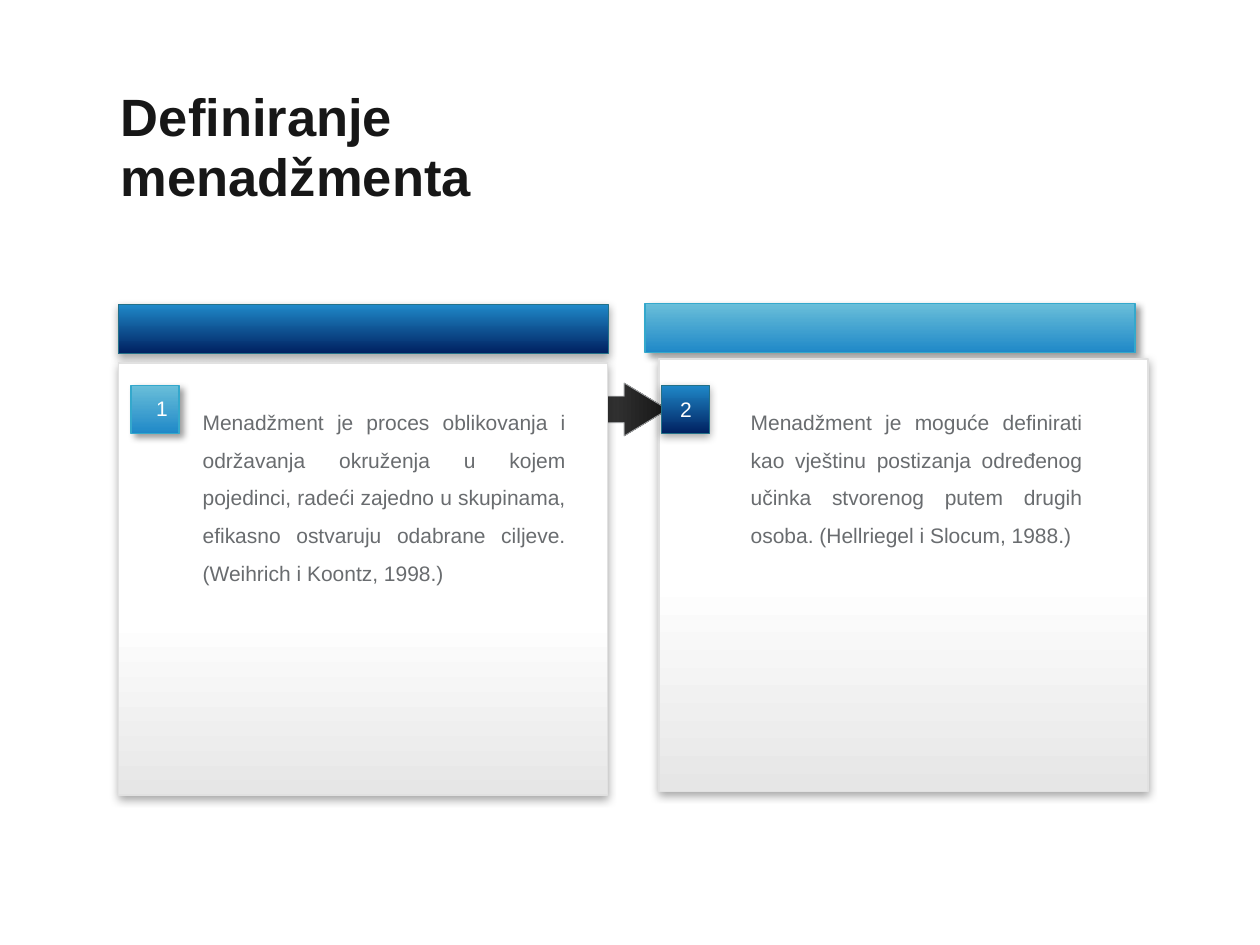
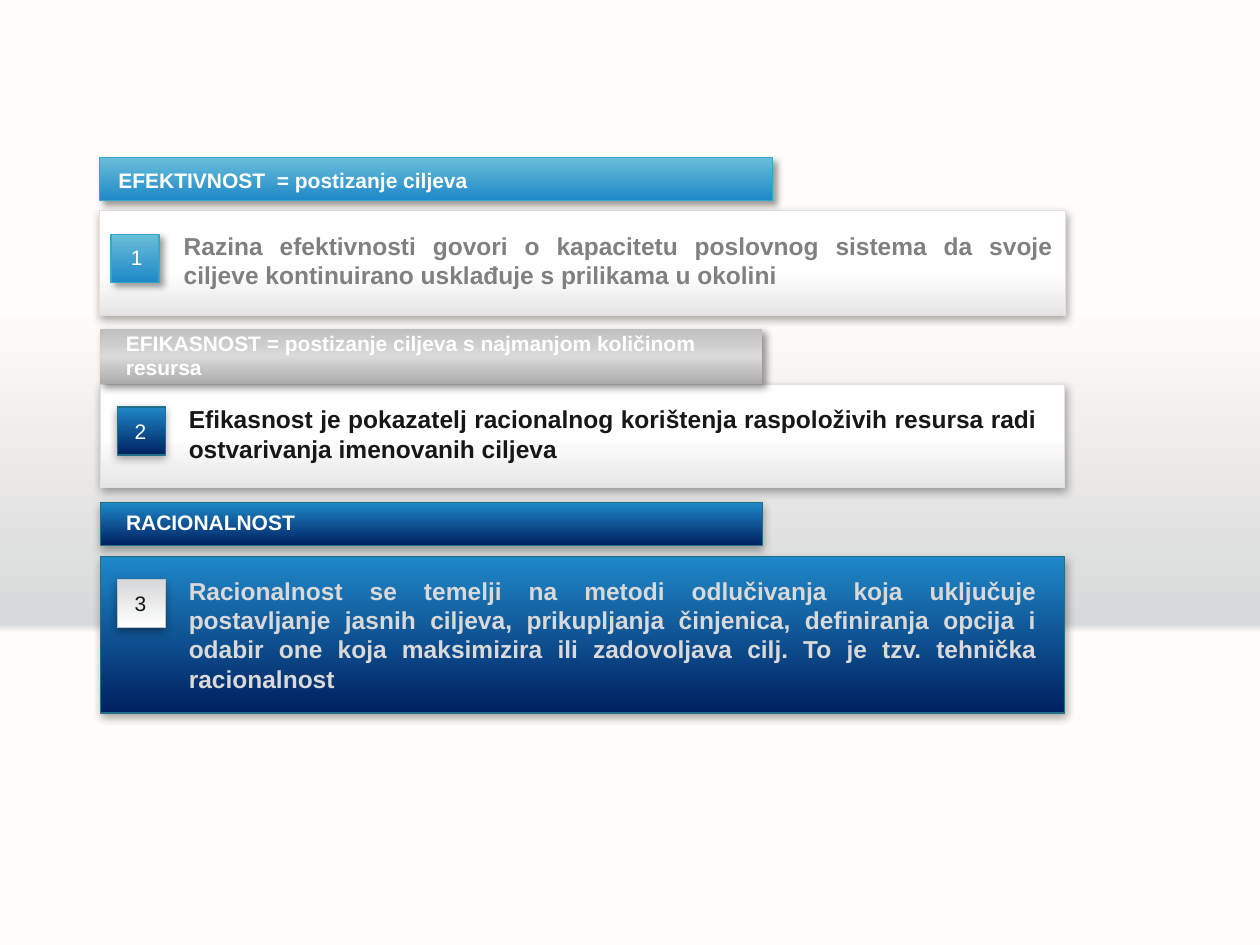
import pptx
import pptx.util
import pptx.dml.color
import pptx.enum.shapes
import pptx.enum.text
import pptx.oxml.ns
import lxml.etree

Pt = pptx.util.Pt
qn = pptx.oxml.ns.qn
Align = pptx.enum.text.PP_ALIGN
Anchor = pptx.enum.text.MSO_ANCHOR
Preset = pptx.enum.shapes.MSO_SHAPE

# Shadows: opacity %, blur, distance, direction
SOFT = (35, 5, 1.8, 90)
SLANTED = (40, 4, 3, 45)

# Looks: gradient stops, gradient angle, line colour, line width, shadow
LIGHT_BLUE = ([(0, "69BED9"), (100, "1F88C8")], 90, "34A8CC", 0.75, SLANTED)
DARK_BLUE = ([(0, "1F88C8"), (100, "002060")], 90, "227088", 0.75, SOFT)
SILVER = ([(0, "D7D8D9"), (100, "FFFFFF")], 90, "C1C2C4", 0.75, SOFT)
GREY = ([(0, "BFBFBF"), (50, "D9D9D9"), (100, "ACACAC")], 90, None, 0, SLANTED)
PANEL_HIGH, PANEL_LOW = [
    ([(0, "FFFFFF"), (middle, "FFFFFF"), (100, "E6E6E6")], 90, "E1E1E1", 0.75, SOFT)
    for middle in (51, 59)
]
BLACK = ([(0, "3A3A3A"), (100, "171717")], 0, "A0A2A4", 0.5, None)
BACKDROP = [(0, "FFFCF9"), (32, "FFFCF9"), (66, "D7D8D9"), (67, "FFFCF9"), (100, "FFFCF9")]

# Text styles: frame, paragraph and font values
TITLE = (
    {"vertical_anchor": Anchor.MIDDLE, "margin_left": 0, "margin_right": 0},
    {"alignment": Align.LEFT, "line_spacing": 0.95},
    {"size": Pt(30), "bold": True},
)
HEADING = (TITLE[0], TITLE[1], {"size": Pt(12), "bold": True})
NUMBER = ({"vertical_anchor": Anchor.MIDDLE}, {"alignment": Align.CENTER}, {"size": Pt(12)})
DEFINITION = ({}, {"alignment": Align.JUSTIFY, "line_spacing": 1.5}, {"size": Pt(12)})
STATEMENT = ({}, {"alignment": Align.JUSTIFY}, {"size": Pt(14), "bold": True})

BADGE = 27.4
NUMBER_SIZE = (25.2, 21.6)


def paint(page, place, look, preset=Preset.RECTANGLE):
    """Draw a gradient shape, or the page background when place is None."""
    stops, angle, line, width, shadow = look
    if place is None:
        owner, element = page.background, page._element
    else:
        owner = page.shapes.add_shape(preset, *map(Pt, place))
        element = owner._element
    owner.fill.gradient()
    gradient = element.find(".//" + qn("a:gradFill"))
    gradient.find(qn("a:lin")).set("ang", str(angle * 60000))
    stop_list = gradient.find(qn("a:gsLst"))
    stop_list.clear()
    for position, color in stops:
        stop = lxml.etree.SubElement(stop_list, qn("a:gs"), pos=str(position * 1000))
        lxml.etree.SubElement(stop, qn("a:srgbClr"), val=color)
    if place is None:
        return owner
    if line:
        owner.line.color.rgb = pptx.dml.color.RGBColor.from_string(line)
        owner.line.width = Pt(width)
    else:
        owner.line.fill.background()
    owner.shadow.inherit = False
    if shadow:
        opacity, blur, distance, direction = shadow
        outer = lxml.etree.SubElement(
            element.spPr.find(qn("a:effectLst")), qn("a:outerShdw"),
            blurRad=str(Pt(blur)), dist=str(Pt(distance)),
            dir=str(direction * 60000), algn="ctr", rotWithShape="0")
        shade = lxml.etree.SubElement(outer, qn("a:srgbClr"), val="000000")
        lxml.etree.SubElement(shade, qn("a:alpha"), val=str(opacity * 1000))
    return owner


def write(page, place, text, style, color, box=None):
    """Put one styled paragraph in a box, by default a new text box."""
    box = box or page.shapes.add_textbox(*map(Pt, place))
    box.left, box.top, box.width, box.height = map(Pt, place)
    frame = box.text_frame
    frame.word_wrap = True
    frame.auto_size = pptx.enum.text.MSO_AUTO_SIZE.NONE
    para = frame.paragraphs[0]
    span = para.add_run()
    span.text = text
    span.font.name = "Arial"
    span.font.color.rgb = pptx.dml.color.RGBColor.from_string(color)
    for target, values in zip((frame, para, span.font), style):
        for name, value in values.items():
            setattr(target, name, value)


deck = pptx.Presentation()
deck.slide_width, deck.slide_height = Pt(720), Pt(540)

# Slide 1: two definitions joined by an arrow
page = deck.slides.add_slide(deck.slide_layouts[5])
write(page, (69.1, 61.2, 210.2, 47.5), "Definiranje menadžmenta", TITLE, "171717",
      page.shapes.title)

paint(page, (368.6, 173.5, 280, 28), LIGHT_BLUE)
paint(page, (376.6, 205.2, 279.4, 247), PANEL_HIGH)
arrow = paint(page, (339.8, 218.9, 41.8, 30.2), BLACK, Preset.RIGHT_ARROW)
arrow.adjustments[0], arrow.adjustments[1] = 0.5, 0.825
paint(page, (67.7, 174.2, 280, 28), DARK_BLUE)
paint(page, (67.7, 207.4, 279.4, 247), PANEL_LOW)

definitions = [
    ("1", LIGHT_BLUE, (74.9, 220.3), (79.9, 222.5), (108.7, 223.2, 221.8, 138.2),
     "Menadžment je proces oblikovanja i održavanja okruženja u kojem pojedinci, "
     "radeći zajedno u skupinama, efikasno ostvaruju odabrane ciljeve. "
     "(Weihrich i Koontz, 1998.)"),
    ("2", DARK_BLUE, (378, 220.3), (379.4, 223.2), (421.9, 223.2, 203.8, 116.6),
     "Menadžment je moguće definirati kao vještinu postizanja određenog učinka "
     "stvorenog putem drugih osoba. (Hellriegel i Slocum, 1988.)"),
]
for number, look, badge, number_corner, place, text in definitions:
    write(page, place, text, DEFINITION, "696C6F")
    paint(page, (*badge, BADGE, BADGE), look)
    write(page, (*number_corner, *NUMBER_SIZE), number, NUMBER, "FFFFFF")

# Slide 2: three terms, each a heading bar over a numbered panel
page = deck.slides.add_slide(deck.slide_layouts[6])
paint(page, None, (BACKDROP, 90, None, 0, None))

terms = [
    {"panel": (56.9, 120.2, 552.2, 59.8), "panel_look": PANEL_LOW,
     "bar": (56.9, 90, 384.5, 24.5), "bar_look": LIGHT_BLUE,
     "heading": (67.7, 92.9, 373.7, 21.6), "title": "EFEKTIVNOST  = postizanje ciljeva",
     "body": (97.9, 128.2, 511.2, 41), "color": "808080",
     "text": "Razina efektivnosti govori o kapacitetu poslovnog sistema da svoje "
             "ciljeve kontinuirano usklađuje s prilikama u okolini",
     "badge": (63.4, 133.9), "badge_look": LIGHT_BLUE,
     "number": (65.5, 136.1), "number_color": "FFFFFF"},
    {"panel": (57.6, 219.6, 550.8, 59), "panel_look": PANEL_HIGH,
     "bar": (56.9, 187.9, 378.7, 31.7), "bar_look": GREY,
     "heading": (72, 191.5, 360, 23.8),
     "title": "EFIKASNOST = postizanje ciljeva s najmanjom količinom resursa",
     "body": (100.8, 227.5, 499, 41), "color": "171717",
     "text": "Efikasnost je pokazatelj racionalnog korištenja raspoloživih resursa "
             "radi ostvarivanja imenovanih ciljeva",
     "badge": (67, 232.6), "badge_look": DARK_BLUE,
     "number": (67.7, 235.4), "number_color": "FFFFFF"},
    {"panel": (57.6, 318.2, 550.8, 89.3), "panel_look": DARK_BLUE,
     "bar": (57.6, 287.3, 378, 24.5), "bar_look": DARK_BLUE,
     "heading": (72, 291.6, 234, 15.1), "title": "RACIONALNOST",
     "body": (100.8, 325.4, 499, 74.9), "color": "D9D9D9",
     "text": "Racionalnost se temelji na metodi odlučivanja koja uključuje "
             "postavljanje jasnih ciljeva, prikupljanja činjenica, definiranja opcija "
             "i odabir one koja maksimizira ili zadovoljava cilj. To je tzv. tehnička "
             "racionalnost",
     "badge": (67, 331.2), "badge_look": SILVER,
     "number": (67.7, 334.1), "number_color": "171717"},
]
for count, term in enumerate(terms, 1):
    paint(page, term["panel"], term["panel_look"])
    write(page, term["body"], term["text"], STATEMENT, term["color"])
    paint(page, term["bar"], term["bar_look"])
    write(page, term["heading"], term["title"], HEADING, "FFFFFF")
    paint(page, (*term["badge"], BADGE, BADGE), term["badge_look"])
    write(page, (*term["number"], *NUMBER_SIZE), str(count), NUMBER, term["number_color"])

deck.save("out.pptx")
